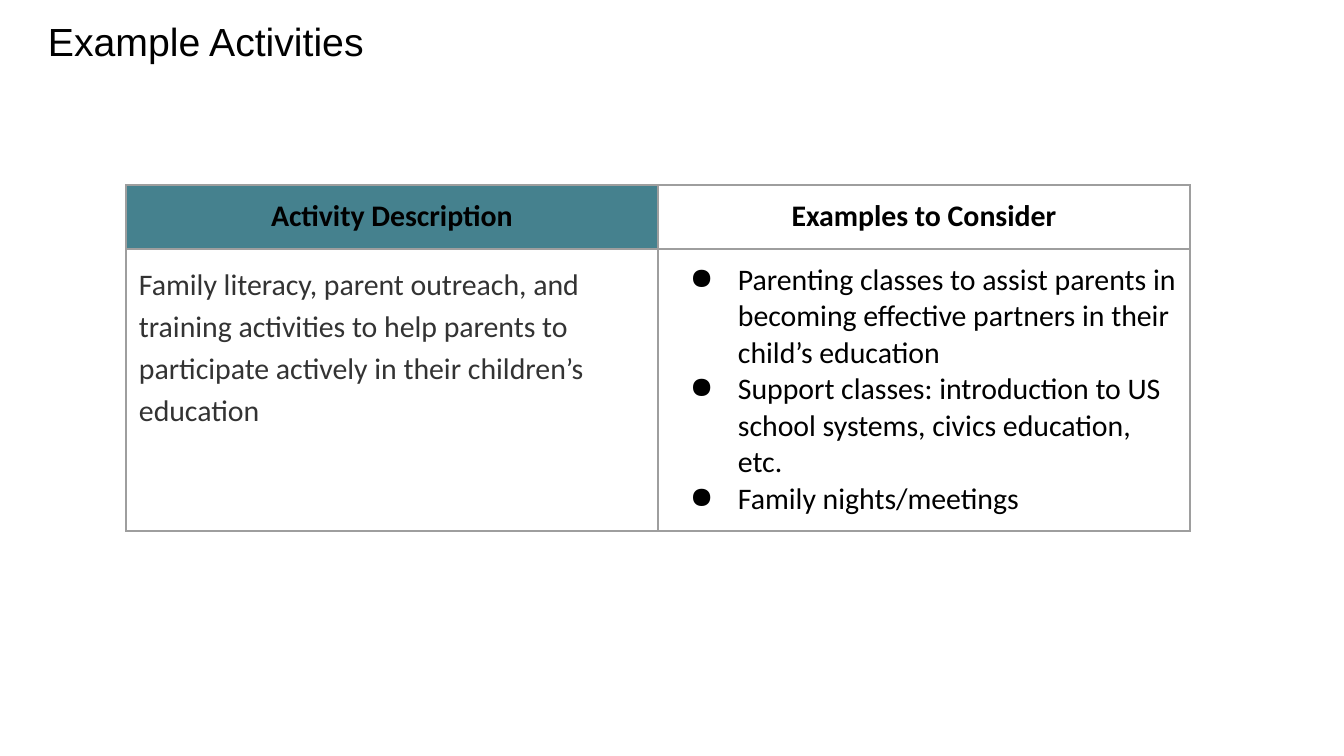
from lxml.etree import SubElement as Sub
from pptx import Presentation
from pptx.dml.color import RGBColor as RGB
from pptx.enum.text import MSO_ANCHOR as Anchor, PP_ALIGN as Align
from pptx.oxml.ns import qn
from pptx.util import Pt

SCALE = 914400 / 134.4
BLACK = RGB(0, 0, 0)
DARK = RGB(0x33, 0x33, 0x33)
TEAL = RGB(0x45, 0x81, 0x8E)
GREY = RGB(0x9E, 0x9E, 0x9E)

HEADS = [("Activity Description", TEAL), ("Examples to Consider", None)]
ABOUT = ("Family literacy, parent outreach, and training activities to help "
         "parents to participate actively in their children’s education")
IDEAS = [
    "Parenting classes to assist parents in becoming effective partners "
    "in their child’s education",
    "Support classes: introduction to US school systems, civics education, etc.",
    "Family nights/meetings",
]


def px(n):
    return round(n * SCALE)


def style(para, font, size, color, bold=False):
    for run in para.runs:
        run.font.name = font
        run.font.size = Pt(size)
        run.font.color.rgb = color
        run.font.bold = bold


def add_title(slide, text):
    title = slide.shapes.title
    title.left, title.top, title.width, title.height = map(px, (48, 23, 890, 99))
    frame = title.text_frame
    frame.margin_left = frame.margin_right = 0
    frame.margin_top = frame.margin_bottom = 0
    frame.vertical_anchor = Anchor.TOP
    frame.word_wrap = True
    frame.text = text
    para = frame.paragraphs[0]
    para.alignment = Align.LEFT
    para.line_spacing = 0.9
    style(para, "Arial", 21, BLACK)


def add_edges(cell):
    props = cell._tc.get_or_add_tcPr()
    for side in ("a:lnL", "a:lnR", "a:lnT", "a:lnB"):
        line = Sub(props, qn(side), w=str(Pt(0.75)))
        Sub(Sub(line, qn("a:solidFill")), qn("a:srgbClr"), val=str(GREY))


def add_bullet(para):
    props = para._p.get_or_add_pPr()
    props.set("marL", str(px(67)))
    props.set("indent", str(px(-48)))
    Sub(Sub(props, qn("a:buClr")), qn("a:srgbClr"), val=str(BLACK))
    Sub(props, qn("a:buChar"), char="●")


def fill_cell(cell, text, color=BLACK, bold=False, back=None):
    cell.margin_left = cell.margin_right = px(13)
    cell.margin_top = cell.margin_bottom = px(13)
    add_edges(cell)
    if back is None:
        cell.fill.background()
    else:
        cell.fill.solid()
        cell.fill.fore_color.rgb = back
    cell.text_frame.text = text
    for para in cell.text_frame.paragraphs:
        style(para, "Calibri", 16, color, bold)
    return cell.text_frame.paragraphs


def add_grid(slide):
    grid = slide.shapes.add_table(2, 2, px(126), px(185), px(1064), px(346)).table
    grid.first_row = grid.horz_banding = False
    for row, high in zip(grid.rows, (64, 282)):
        row.height = px(high)
    for col, (text, back) in enumerate(HEADS):
        head = fill_cell(grid.cell(0, col), text, bold=True, back=back)[0]
        head.alignment = Align.CENTER
    about = fill_cell(grid.cell(1, 0), ABOUT, DARK)[0]
    about.line_spacing = 1.15
    about.space_after = Pt(12)
    for para in fill_cell(grid.cell(1, 1), "\n".join(IDEAS)):
        add_bullet(para)


def main():
    deck = Presentation()
    deck.slide_width, deck.slide_height = px(1344), px(756)
    slide = deck.slides.add_slide(deck.slide_layouts[5])
    add_title(slide, "Example Activities")
    add_grid(slide)
    deck.save("out.pptx")


if __name__ == "__main__":
    main()
